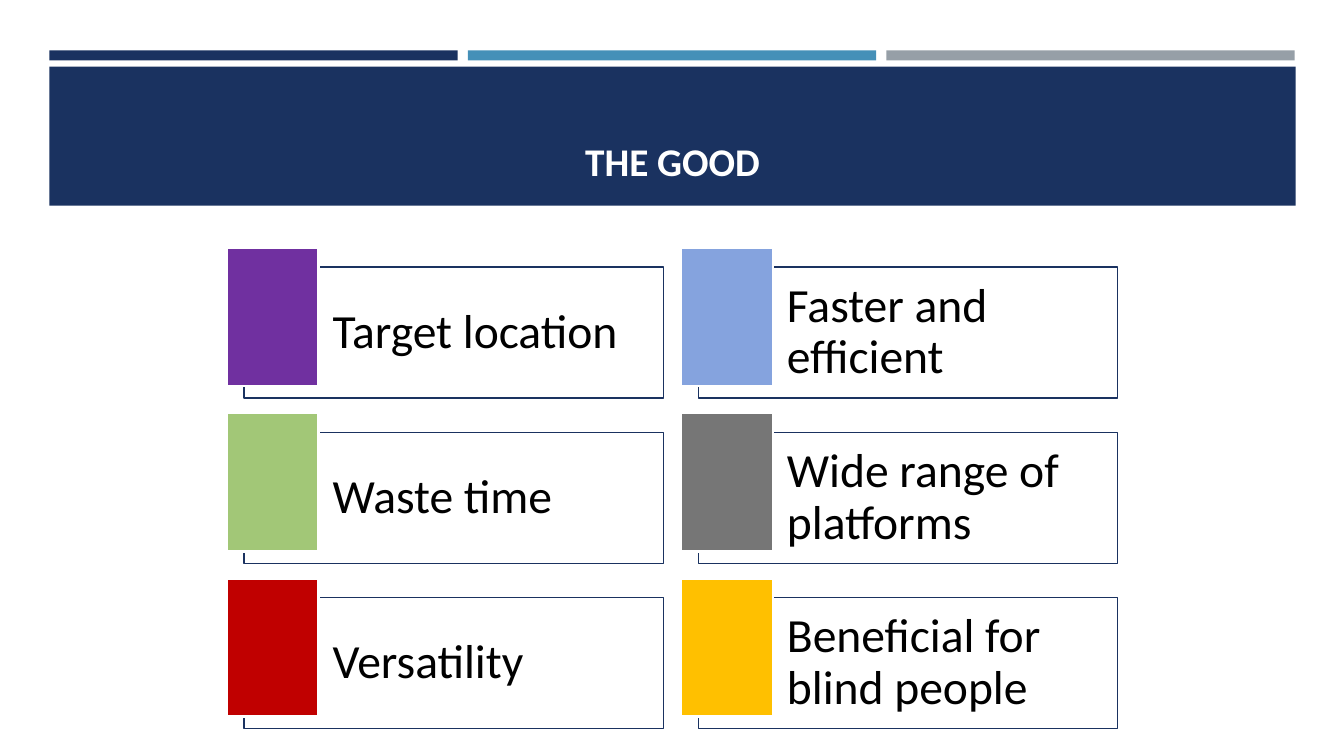
from dataclasses import dataclass

from lxml.etree import SubElement
from pptx import Presentation
from pptx.dml.color import RGBColor
from pptx.enum.shapes import MSO_SHAPE as Shape
from pptx.enum.text import MSO_ANCHOR as Anchor, PP_ALIGN as Align
from pptx.oxml.ns import qn
from pptx.util import Inches, Pt


@dataclass(frozen=True)
class Theme:
    font: str = "Calibri"
    navy: str = "1A3260"
    blue: str = "4590B8"
    grey: str = "969FA7"
    white: str = "FFFFFF"
    black: str = "000000"
    title_size: int = 28
    card_size: int = 34
    card_line: float = 1
    swatch_line: float = 1.75
    card_opacity: int = 40


THEME = Theme()

# Benefits in reading order, each with its swatch colour
BENEFITS = [
    ("Target location", "7030A0"),
    ("Faster and efficient", "85A3DE"),
    ("Waste time", "A2C777"),
    ("Wide range of platforms", "767676"),
    ("Versatility", "C00000"),
    ("Beneficial for blind people", "FFC000"),
]
COLUMNS = 2
GRID_LEFT, GRID_TOP = 2.25, 2.46
COLUMN_STEP, ROW_STEP = 4.505, 1.64


def set_values(target, values):
    for name, value in values.items():
        setattr(target, name, value)


def add_block(page, at, fill, line=None, width=0):
    """Add a flat rectangle, outlined when a line colour is given."""
    block = page.shapes.add_shape(Shape.RECTANGLE, *map(Inches, at))
    block.shadow.inherit = False
    block.fill.solid()
    block.fill.fore_color.rgb = RGBColor.from_string(fill)
    if line:
        block.line.color.rgb = RGBColor.from_string(line)
        block.line.width = Pt(width)
    else:
        block.line.fill.background()
    return block


def set_opacity(block, percent):
    color = block.fill._xPr.find(f"{qn('a:solidFill')}/{qn('a:srgbClr')}")
    SubElement(color, qn("a:alpha"), val=str(percent * 1000))


def write_text(box, text, color, frame_format, para_format, font_format):
    frame = box.text_frame
    set_values(frame, {"word_wrap": True, **frame_format})
    para = frame.paragraphs[0]
    set_values(para, para_format)
    span = para.add_run()
    span.text = text
    set_values(span.font, {"name": THEME.font, **font_format})
    span.font.color.rgb = RGBColor.from_string(color)


def add_header(page):
    # Three accent strips above the title band
    for index, color in enumerate((THEME.navy, THEME.blue, THEME.grey)):
        add_block(page, (0.49 + index * 4.15, 0.5, 4.05, 0.1), color)
    add_block(page, (0.49, 0.66, 12.36, 1.38), THEME.navy)

    # Title
    title = page.shapes.add_textbox(*map(Inches, (0.64, 0.8, 12.06, 1.08)))
    write_text(
        title, "THE GOOD", THEME.white,
        {"vertical_anchor": Anchor.BOTTOM},
        {"alignment": Align.CENTER},
        {"size": Pt(THEME.title_size), "bold": True},
    )


def add_benefit(page, left, top, text, color):
    # Outlined card holding the text
    card = add_block(page, (left + 0.17, top + 0.19, 4.16, 1.3),
                     THEME.white, THEME.navy, THEME.card_line)
    set_opacity(card, THEME.card_opacity)
    margin = Inches(0.14)
    write_text(
        card, text, THEME.black,
        {"vertical_anchor": Anchor.MIDDLE, "margin_left": Inches(0.88),
         "margin_right": margin, "margin_top": margin, "margin_bottom": margin},
        {"alignment": Align.LEFT, "line_spacing": 0.9},
        {"size": Pt(THEME.card_size)},
    )
    # Colour swatch overlapping the card's corner
    add_block(page, (left, top, 0.91, 1.37), color, THEME.white, THEME.swatch_line)


def main():
    deck = Presentation()
    set_values(deck, {"slide_width": Inches(13.33), "slide_height": Inches(7.5)})
    page = deck.slides.add_slide(deck.slide_layouts[6])

    add_header(page)
    for index, (text, color) in enumerate(BENEFITS):
        row, column = divmod(index, COLUMNS)
        add_benefit(page, GRID_LEFT + column * COLUMN_STEP,
                    GRID_TOP + row * ROW_STEP, text, color)

    deck.save("out.pptx")


if __name__ == "__main__":
    main()
